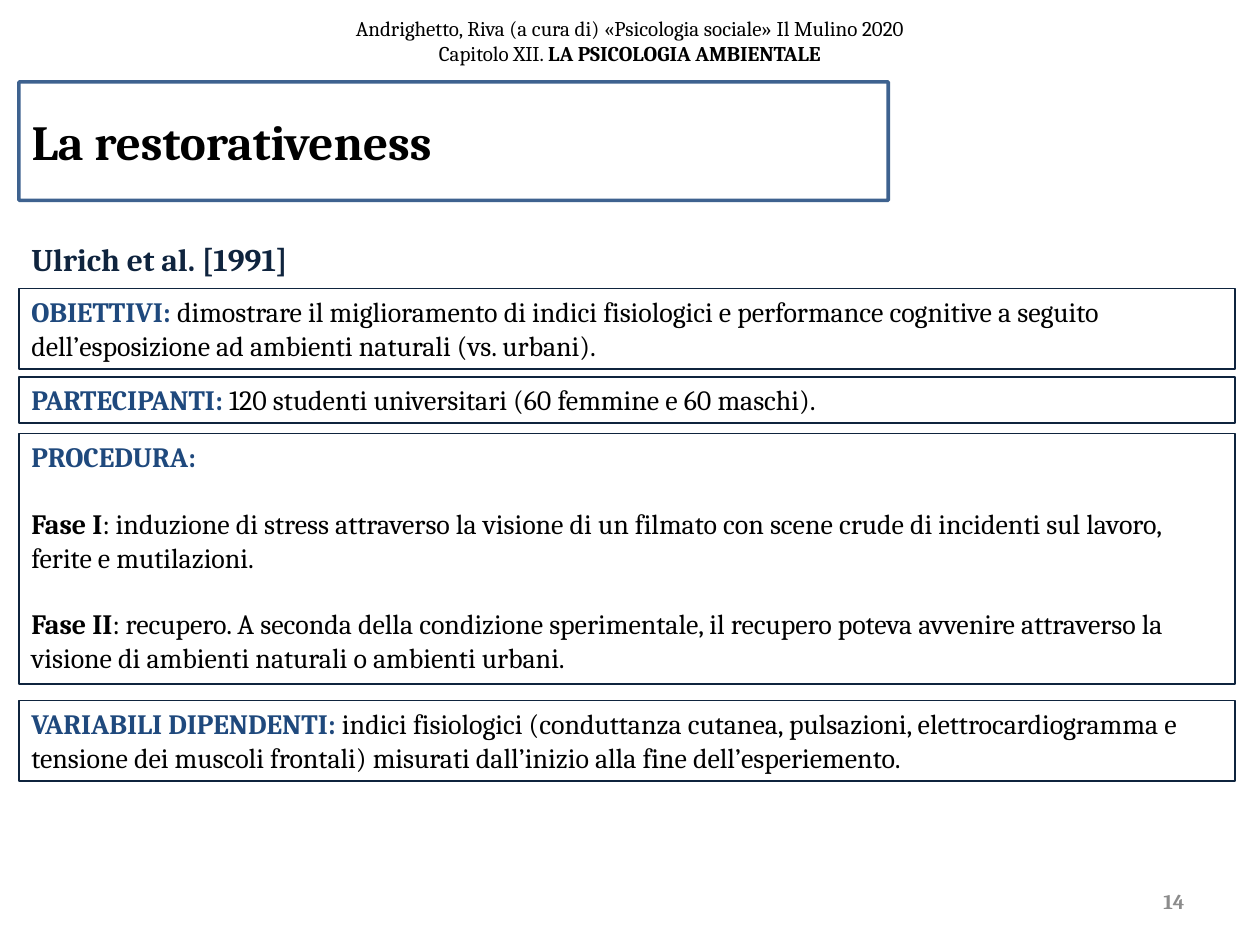
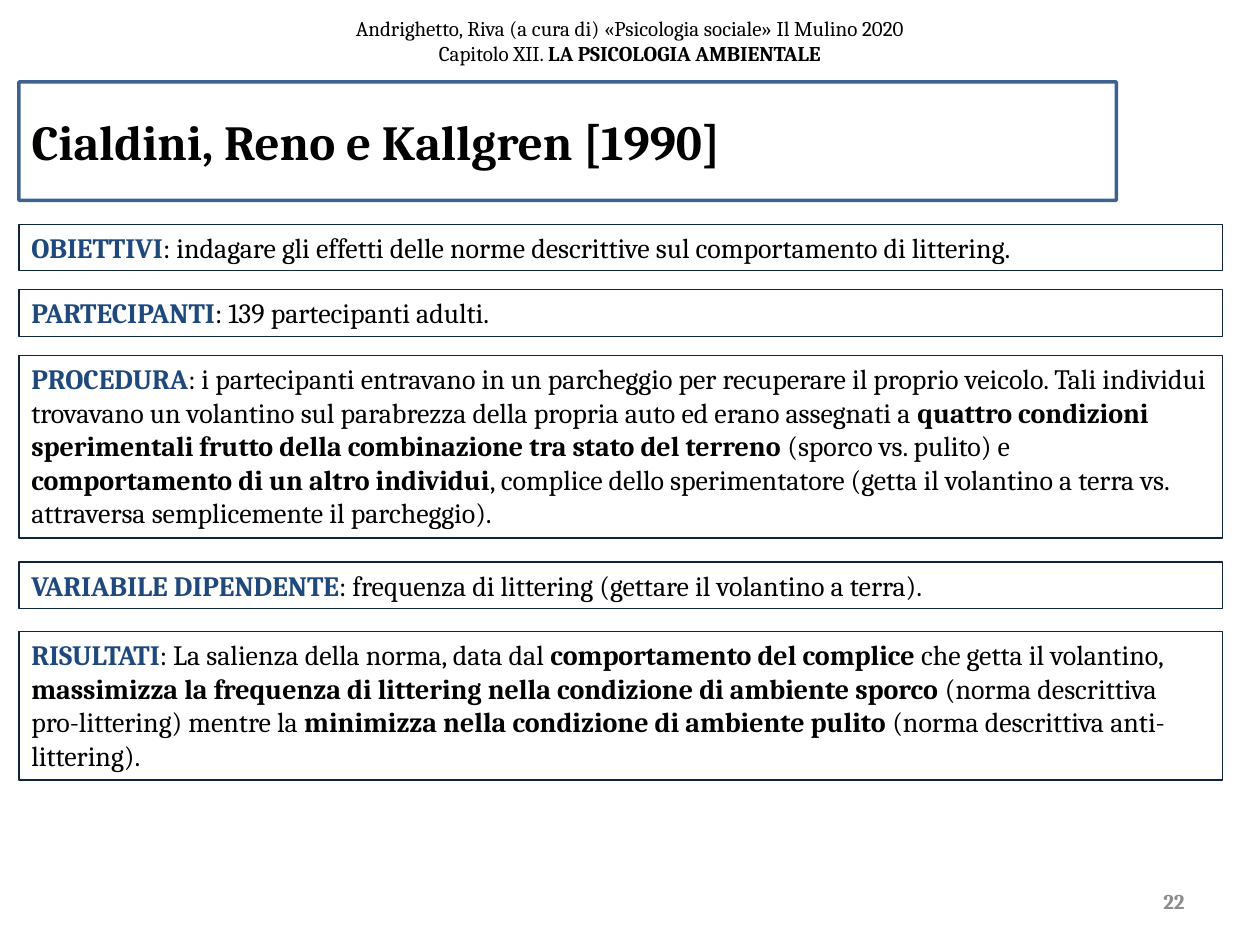
from lxml.etree import SubElement
from pptx import Presentation
from pptx.dml.color import RGBColor
from pptx.enum.shapes import MSO_SHAPE as Shape
from pptx.enum.text import MSO_ANCHOR as Anchor, MSO_AUTO_SIZE as AutoSize, PP_ALIGN as Align
from pptx.oxml.ns import qn
from pptx.util import Inches, Pt

BLACK = RGBColor(0x00, 0x00, 0x00)
BLUE = RGBColor(0x1F, 0x49, 0x7D)
NAVY = RGBColor(0x0F, 0x24, 0x3E)
GREY = RGBColor(0x8C, 0x8C, 0x8C)

PLAIN = {"bold": False, "color": BLACK}
BOLD = {"bold": True, "color": BLACK}
LABEL = {"bold": True, "color": BLUE}
HEADING = {"bold": True, "color": NAVY}
NUMBER = {"bold": True, "color": GREY}

LEFT = 0.15
TITLE_ONLY = 5


class Deck:
    font_name = "Cambria"

    def __init__(self):
        self.presentation = Presentation()
        self.presentation.slide_width = Inches(10)
        self.presentation.slide_height = Inches(7.5)
        self.slide = None

    def add_slide(self, title, title_width, number):
        layout = self.presentation.slide_layouts[TITLE_ONLY]
        self.slide = self.presentation.slides.add_slide(layout)
        self.header()
        self.title(title, title_width)
        self.text_box(7.17, 6.95, 2.33, 0.4, [[(number, NUMBER)]], 12, Align.RIGHT, Anchor.MIDDLE)

    def header(self):
        lines = [
            [("Andrighetto, Riva (a cura di) «Psicologia sociale» Il Mulino 2020", PLAIN)],
            [("Capitolo XII. ", PLAIN), ("LA PSICOLOGIA AMBIENTALE", BOLD)],
        ]
        self.text_box(0, -0.11, 10, 0.87, lines, 12, Align.CENTER, Anchor.MIDDLE)

    def title(self, text, width):
        title = self.slide.shapes.title
        self.place(title, LEFT, 0.65, width, 0.94)
        self.outline(title, BLUE, 2)
        color = title.element.find(f".//{qn('a:ln')}//{qn('a:srgbClr')}")
        SubElement(color, qn("a:alpha"), val="86000")
        self.set_text(title, [[(text, BOLD)]], 28, anchor=Anchor.MIDDLE)

    def text_box(self, left, top, width, height, paragraphs, size,
                 align=Align.LEFT, anchor=Anchor.TOP):
        box = self.slide.shapes.add_textbox(*map(Inches, (left, top, width, height)))
        self.set_text(box, paragraphs, size, align, anchor)

    def panel(self, top, width, height, paragraphs, line_width, gap=0):
        shape = self.slide.shapes.add_shape(
            Shape.RECTANGLE, *map(Inches, (LEFT, top, width, height)))
        shape.shadow.inherit = False
        self.outline(shape, NAVY, line_width)
        self.set_text(shape, paragraphs, 16, gap=gap)
        shape.text_frame.auto_size = AutoSize.SHAPE_TO_FIT_TEXT

    def place(self, shape, *box):
        for name, value in zip(("left", "top", "width", "height"), box):
            setattr(shape, name, Inches(value))

    def outline(self, shape, color, width):
        shape.fill.background()
        shape.line.color.rgb = color
        shape.line.width = Pt(width)

    def set_text(self, shape, paragraphs, size, align=Align.LEFT, anchor=Anchor.TOP, gap=0):
        """Fill a shape with paragraphs of (text, style) runs, gap points apart."""
        frame = shape.text_frame
        frame_format = {"word_wrap": True, "auto_size": AutoSize.NONE, "vertical_anchor": anchor}
        for name, value in frame_format.items():
            setattr(frame, name, value)
        for index, runs in enumerate(paragraphs):
            paragraph = frame.add_paragraph() if index else frame.paragraphs[0]
            paragraph.alignment = align
            if index and gap:
                paragraph.space_before = Pt(gap)
            for text, style in runs:
                run = paragraph.add_run()
                run.text = text
                font_format = {"name": self.font_name, "size": Pt(size), "bold": style["bold"]}
                for name, value in font_format.items():
                    setattr(run.font, name, value)
                run.font.color.rgb = style["color"]


def restorativeness_slide(deck):
    deck.add_slide("La restorativeness", 6.9, "14")
    deck.text_box(LEFT, 1.86, 9.35, 0.4, [[("Ulrich et al. [1991]", HEADING)]], 18)
    panels = [
        (2.29, 0.64, [[
            ("OBIETTIVI: ", LABEL),
            ("dimostrare il miglioramento di indici fisiologici e performance cognitive a seguito "
             "dell’esposizione ad ambienti naturali (vs. urbani).", PLAIN)]]),
        (2.99, 0.37, [[
            ("PARTECIPANTI: ", LABEL),
            ("120 studenti universitari (60 femmine e 60 maschi).", PLAIN)]]),
        (3.44, 1.99, [
            [("PROCEDURA:", LABEL)],
            [("Fase I", BOLD),
             (": induzione di stress attraverso la visione di un filmato con scene crude di "
              "incidenti sul lavoro, ferite e mutilazioni.", PLAIN)],
            [("Fase II", BOLD),
             (": recupero. A seconda della condizione sperimentale, il recupero poteva avvenire "
              "attraverso la visione di ambienti naturali o ambienti urbani.", PLAIN)]]),
        (5.56, 0.64, [[
            ("VARIABILI DIPENDENTI: ", LABEL),
            ("indici fisiologici (conduttanza cutanea, pulsazioni, elettrocardiogramma e tensione "
             "dei muscoli frontali) misurati dall’inizio alla fine dell’esperiemento.", PLAIN)]]),
    ]
    for top, height, paragraphs in panels:
        deck.panel(top, 9.65, height, paragraphs, line_width=1, gap=19)


def littering_slide(deck):
    deck.add_slide("Cialdini, Reno e Kallgren [1990]", 8.71, "22")
    panels = [
        (1.78, 0.37, [
            ("OBIETTIVI", LABEL),
            (": indagare gli effetti delle norme descrittive sul comportamento di littering.",
             PLAIN)]),
        (2.3, 0.37, [("PARTECIPANTI", LABEL), (": 139 partecipanti adulti.", PLAIN)]),
        (2.82, 1.45, [
            ("PROCEDURA", LABEL),
            (": i partecipanti entravano in un parcheggio per recuperare il proprio veicolo. "
             "Tali individui trovavano un volantino sul parabrezza della propria auto ed erano "
             "assegnati a ", PLAIN),
            ("quattro condizioni sperimentali frutto della combinazione tra stato del terreno ",
             BOLD),
            ("(sporco vs. pulito) e ", PLAIN),
            ("comportamento di un altro individui", BOLD),
            (", complice dello sperimentatore (getta il volantino a terra vs. attraversa "
             "semplicemente il parcheggio).", PLAIN)]),
        (4.46, 0.37, [
            ("VARIABILE DIPENDENTE", LABEL),
            (": frequenza di littering (gettare il volantino a terra).", PLAIN)]),
        (5.01, 1.18, [
            ("RISULTATI", LABEL),
            (": La salienza della norma, data dal ", PLAIN),
            ("comportamento del complice ", BOLD),
            ("che getta il volantino, ", PLAIN),
            ("massimizza la frequenza di littering nella condizione di ambiente sporco ", BOLD),
            ("(norma descrittiva pro-littering) mentre la ", PLAIN),
            ("minimizza nella condizione di ambiente pulito ", BOLD),
            ("(norma descrittiva anti-littering).", PLAIN)]),
    ]
    for top, height, runs in panels:
        deck.panel(top, 9.55, height, [runs], line_width=0.75)


def main():
    deck = Deck()
    restorativeness_slide(deck)
    littering_slide(deck)
    deck.presentation.save("out.pptx")


if __name__ == "__main__":
    main()
